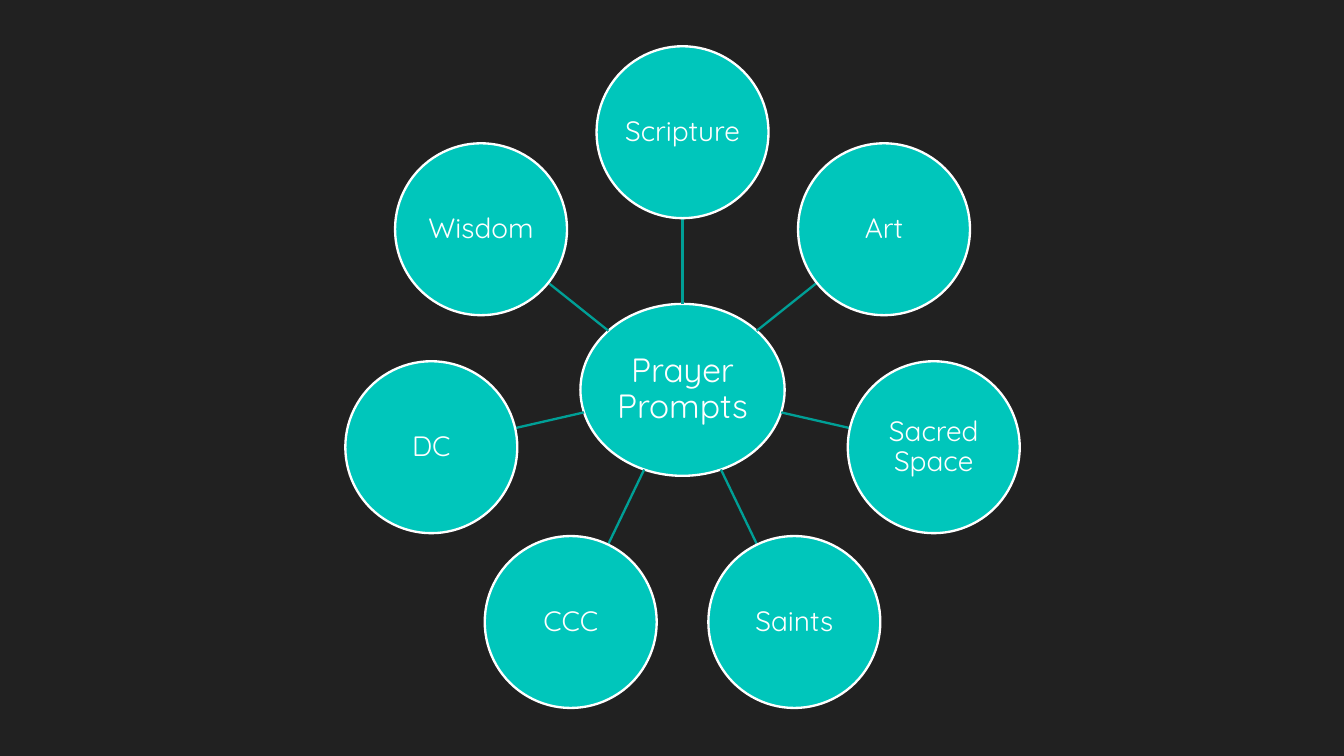
import dataclasses
import math

import lxml.etree
import pptx
import pptx.dml.color
import pptx.enum.shapes
import pptx.enum.text
import pptx.oxml.ns
import pptx.slide
import pptx.util
from pptx.util import Cm

COLORS = {"background": "212121", "fill": "00C6BB", "outline": "FFFFFF",
          "spoke": "009F96", "text": "FFFFFF"}
FONT = "Quicksand"
LINE_WIDTH = pptx.util.Pt(1.25)
ORBIT = 4.87  # cm from the hub centre to each topic centre
TOPIC_SIZE = 3.25


@dataclasses.dataclass
class Bubble:
    """An ellipse with a label; lengths in cm, text size in points."""
    label: str
    x: float
    y: float
    width: float = TOPIC_SIZE
    height: float = TOPIC_SIZE
    text_size: int = 15


HUB = Bubble("Prayer Prompts", 12.9, 7.37, width=3.86, text_size=18)
TOPICS = ["Scripture", "Art", "Sacred Space", "Saints", "CCC", "DC", "Wisdom"]


def color(name: str) -> pptx.dml.color.RGBColor:
    return pptx.dml.color.RGBColor.from_string(COLORS[name])


def point_from_hub(angle: float, distance: float) -> tuple[float, float]:
    """Angles run clockwise from the top."""
    return HUB.x + distance * math.sin(angle), HUB.y - distance * math.cos(angle)


def draw_bubble(page: pptx.slide.Slide, bubble: Bubble) -> None:
    shape = page.shapes.add_shape(
        pptx.enum.shapes.MSO_SHAPE.OVAL,
        Cm(bubble.x - bubble.width / 2), Cm(bubble.y - bubble.height / 2),
        Cm(bubble.width), Cm(bubble.height))
    shape.shadow.inherit = False
    shape.fill.solid()
    shape.fill.fore_color.rgb = color("fill")
    shape.line.color.rgb = color("outline")
    shape.line.width = LINE_WIDTH

    frame = shape.text_frame
    frame.word_wrap = True
    frame.vertical_anchor = pptx.enum.text.MSO_ANCHOR.MIDDLE
    frame.margin_left = frame.margin_right = Cm(0.03)
    frame.margin_top = frame.margin_bottom = Cm(0.03)
    frame.text = bubble.label
    para = frame.paragraphs[0]
    para.alignment = pptx.enum.text.PP_ALIGN.CENTER
    para.line_spacing = 0.9
    span = para.runs[0]
    span.font.name = FONT
    span.font.size = pptx.util.Pt(bubble.text_size)
    span.font.color.rgb = color("text")


def draw_spoke(page: pptx.slide.Slide, angle: float) -> None:
    """Join the hub's edge to the edge of the topic at this angle."""
    hub_edge = 1 / math.hypot(math.sin(angle) / (HUB.width / 2),
                              math.cos(angle) / (HUB.height / 2))
    start_x, start_y = point_from_hub(angle, hub_edge)
    end_x, end_y = point_from_hub(angle, ORBIT - TOPIC_SIZE / 2)
    spoke = page.shapes.add_connector(
        pptx.enum.shapes.MSO_CONNECTOR.STRAIGHT,
        Cm(start_x), Cm(start_y), Cm(end_x), Cm(end_y))
    spoke.line.color.rgb = color("spoke")
    spoke.line.width = LINE_WIDTH
    lxml.etree.SubElement(spoke._element.spPr, pptx.oxml.ns.qn("a:effectLst"))


def main() -> None:
    deck = pptx.Presentation()
    deck.slide_width, deck.slide_height = Cm(25.4), Cm(14.29)
    page = deck.slides.add_slide(deck.slide_layouts.get_by_name("Blank"))
    page.background.fill.solid()
    page.background.fill.fore_color.rgb = color("background")

    draw_bubble(page, HUB)
    for index, label in enumerate(TOPICS):
        angle = math.tau * index / len(TOPICS)
        draw_spoke(page, angle)
        draw_bubble(page, Bubble(label, *point_from_hub(angle, ORBIT)))
    deck.save("out.pptx")


if __name__ == "__main__":
    main()
